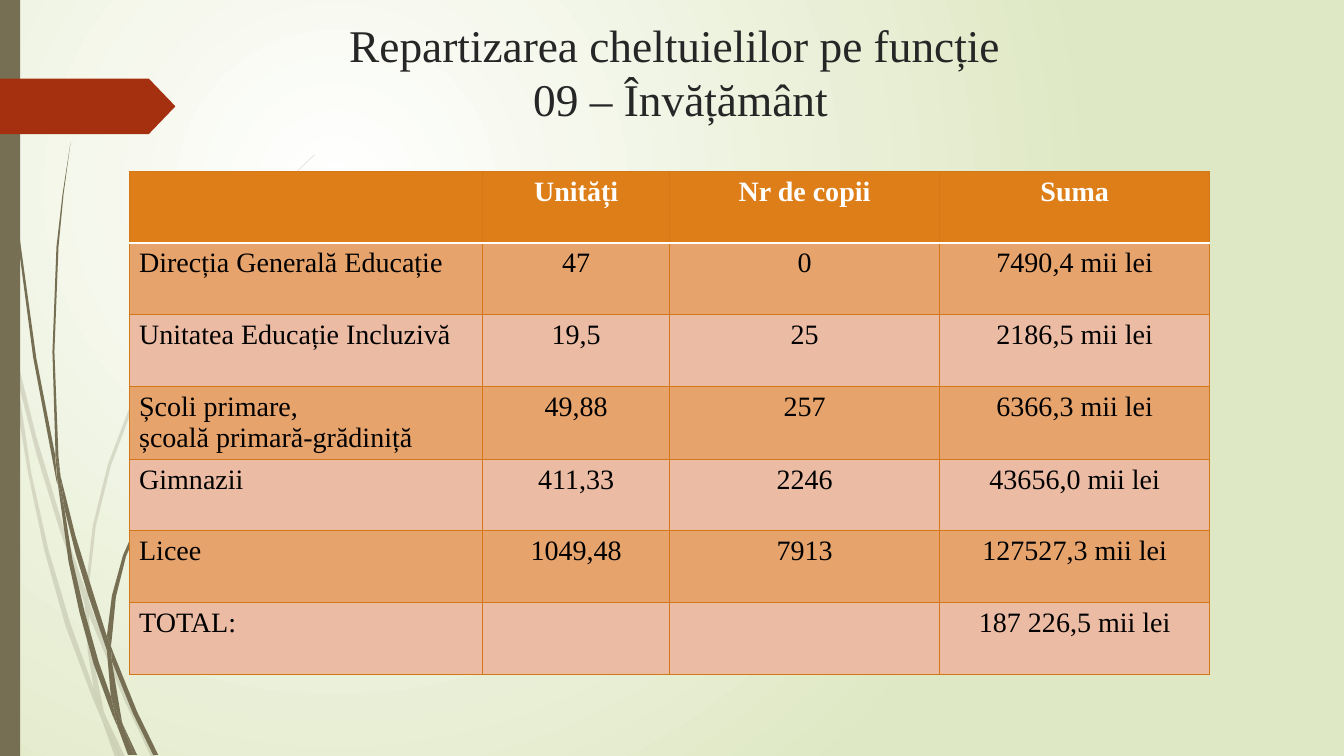
from lxml import etree
from pptx import Presentation
from pptx.dml.color import RGBColor
from pptx.enum.shapes import MSO_SHAPE
from pptx.enum.text import MSO_ANCHOR, PP_ALIGN
from pptx.oxml import parse_xml
from pptx.oxml.ns import nsdecls, qn
from pptx.util import Inches, Pt

CENTER, LEFT = PP_ALIGN.CENTER, PP_ALIGN.LEFT
TOP = MSO_ANCHOR.TOP
RECTANGLE, PENTAGON = MSO_SHAPE.RECTANGLE, MSO_SHAPE.PENTAGON
FONT = "Times New Roman"
COLORS = {
    "white": "FFFFFF", "black": "000000", "title": "262626",
    "green": "DFE8C4", "grass": "766F54", "arrow": "A53010",
    "header": "DE7E18", "band_dark": "E6A36C", "band_light": "EBBBA4",
    "border": "D47817",
}
RGB = {name: RGBColor.from_string(value) for name, value in COLORS.items()}


def fill_plain(shape, color):
    shape.shadow.inherit = False
    shape.line.fill.background()
    shape.fill.solid()
    shape.fill.fore_color.rgb = RGB[color]


def add_run(paragraph, text, size, color, bold=False):
    run = paragraph.add_run()
    run.text = text
    run.font.name = FONT
    run.font.size = Pt(size)
    run.font.bold = bold
    run.font.color.rgb = RGB[color]


presentation = Presentation()
presentation.slide_width = Inches(13.33)
presentation.slide_height = Inches(7.5)
slide = presentation.slides.add_slide(presentation.slide_layouts[6])

# Background: white glow in the upper left fading to green
background = slide.background.fill
background.gradient()
for stop, color in zip(background.gradient_stops, ("white", "green")):
    stop.color.rgb = RGB[color]
linear = slide.background._cSld.find(".//" + qn("a:lin"))
linear.getparent().replace(linear, parse_xml(
    f'<a:path {nsdecls("a")} path="circle">'
    '<a:fillToRect l="50000" t="50000" r="100000" b="100000"/></a:path>'))

# Grass: segments of the blades, pale ones behind, solid ones in front
pale_segments = [
    [(0.11, 3.5), (0.09, 3.22), (0, 2.82), (0, 2.99), (0.1, 3.44)],
    [(0.58, 5.22), (0.84, 5.99), (0.85, 5.86), (0.62, 5.2), (0.36, 4.33), (0.14, 3.45),
     (0.17, 3.76), (0.36, 4.5)],
    [(0.92, 6.07), (0.88, 5.96), (0.88, 6.1), (1.23, 6.94), (1.5, 7.51), (1.55, 7.51), (1.27, 6.92)],
    [(1.19, 7.51), (1.24, 7.51), (1.05, 7.11)],
    [(0.93, 6.83), (0.7, 6.19), (0.48, 5.45), (0.31, 4.69), (0.17, 3.76), (0.11, 3.5), (0.18, 4.1),
     (0.28, 4.7), (0.44, 5.46), (0.65, 6.21), (0.92, 6.93), (1.01, 7.14), (0.99, 7.07)],
    [(0.84, 5.99), (0.87, 6.46), (0.93, 6.83), (0.96, 6.92), (1.05, 7.11), (1.03, 7.06),
     (0.91, 6.46), (0.88, 6.1), (0.88, 6.08)],
    [(0.88, 5.84), (0.95, 5.22), (1.1, 4.62), (1.32, 4.04), (1.6, 3.49), (1.92, 2.95), (2.29, 2.45),
     (2.68, 1.98), (2.9, 1.75), (3.12, 1.54), (3.12, 1.53), (2.89, 1.75), (2.68, 1.97), (2.28, 2.44),
     (1.9, 2.94), (1.58, 3.48), (1.29, 4.03), (1.07, 4.61), (0.92, 5.22), (0.85, 5.84),
     (0.85, 5.86), (0.88, 5.96)],
    [(1.01, 7.14), (1.14, 7.51), (1.19, 7.51)],
    [(0.88, 6.08), (0.88, 6.1), (0.88, 5.96), (0.85, 5.86), (0.84, 5.99)],
    [(0.96, 6.92), (0.93, 6.83), (0.99, 7.07), (1.01, 7.14), (1.19, 7.51), (1.05, 7.11)],
]
solid_segments = [
    [(0.07, 1.1), (0.17, 2.33), (0.33, 3.55), (0.56, 4.77), (0.57, 4.81), (0.55, 4.57), (0.55, 4.53),
     (0.36, 3.55), (0.19, 2.32), (0.08, 1.09), (0.05, 0.48), (0.04, 0), (0.03, 0), (0.04, 0.48)],
    [(0.88, 5.92), (1.06, 6.45), (1.06, 6.33), (1.06, 6.31), (0.93, 5.9), (0.75, 5.32), (0.6, 4.72),
     (0.64, 5.05), (0.75, 5.49)],
    [(1.13, 6.49), (1.1, 6.41), (1.11, 6.56), (1.32, 7.08), (1.52, 7.49), (1.57, 7.49), (1.36, 7.06)],
    [(1.1, 6.91), (0.98, 6.57), (0.84, 6.07), (0.72, 5.56), (0.64, 5.05), (0.57, 4.77), (0.68, 5.57),
     (0.79, 6.08), (0.93, 6.59), (1.11, 7.08), (1.17, 7.22), (1.16, 7.17)],
    [(0.6, 4.72), (0.58, 4.53), (0.54, 3.49), (0.58, 2.45), (0.63, 1.93), (0.7, 1.41),
     (0.62, 1.93), (0.56, 2.45), (0.52, 3.49), (0.55, 4.49)],
    [(1.33, 7.49), (1.36, 7.49), (1.22, 7.19)],
    [(0.57, 4.77), (0.64, 5.05), (0.6, 4.72), (0.55, 4.49), (0.55, 4.53)],
    [(1.11, 6.33), (1.15, 5.92), (1.25, 5.52), (1.58, 4.76), (2.05, 4.06), (2.31, 3.74), (2.45, 3.59),
     (2.61, 3.44), (2.6, 3.44), (2.45, 3.58), (2.31, 3.73), (2.04, 4.05), (1.56, 4.74),
     (1.22, 5.51), (1.11, 5.91), (1.06, 6.31), (1.1, 6.41)],
    [(1.17, 7.22), (1.27, 7.49), (1.31, 7.49)],
    [(1.06, 6.45), (1.1, 6.91), (1.16, 7.06), (1.22, 7.19), (1.21, 7.16), (1.11, 6.56), (1.09, 6.51)],
    [(1.06, 6.45), (1.09, 6.51), (1.11, 6.56), (1.1, 6.41), (1.06, 6.31)],
    [(1.16, 7.06), (1.1, 6.91), (1.16, 7.17), (1.17, 7.22), (1.3, 7.49), (1.33, 7.49), (1.22, 7.19)],
]
for opacity, segments in ((20, pale_segments), (100, solid_segments)):
    for outline in segments:
        vertices = [(Inches(x), Inches(y)) for x, y in outline]
        builder = slide.shapes.build_freeform(*vertices[0])
        builder.add_line_segments(vertices[1:], close=True)
        blade = builder.convert_to_shape()
        fill_plain(blade, "grass")
        if opacity < 100:
            color_node = blade._element.spPr.find(".//" + qn("a:srgbClr"))
            etree.SubElement(color_node, qn("a:alpha"), val=str(opacity * 1000))

# Side bar and arrow
side_bar = slide.shapes.add_shape(RECTANGLE, 0, 0, Inches(0.2), Inches(7.5))
fill_plain(side_bar, "grass")
arrow = slide.shapes.add_shape(PENTAGON, 0, Inches(0.78), Inches(1.74), Inches(0.55))
arrow.adjustments[0] = 0.48
fill_plain(arrow, "arrow")

# Title
title = slide.shapes.add_textbox(Inches(1.5), Inches(0.12), Inches(10.5), Inches(1.35))
frame = title.text_frame
frame.word_wrap = True
frame.vertical_anchor = TOP
frame.margin_top = Inches(0.05)
paragraph = frame.paragraphs[0]
paragraph.alignment = CENTER
add_run(paragraph, "Repartizarea cheltuielilor pe funcție ", 32.4, "title")
paragraph.add_line_break()
add_run(paragraph, "09 – Învățământ", 32.4, "title")

# Table
rows = [
    ("", "Unități", "Nr de copii", "Suma"),
    ("Direcția Generală Educație", "47", "0", "7490,4 mii lei"),
    ("Unitatea Educație Incluzivă", "19,5", "25", "2186,5 mii lei"),
    ("Școli primare,\nșcoală primară-grădiniță", "49,88", "257", "6366,3 mii lei"),
    ("Gimnazii", "411,33", "2246", "43656,0 mii lei"),
    ("Licee", "1049,48", "7913", "127527,3 mii lei"),
    ("TOTAL:", "", "", "187 226,5 mii lei"),
]
column_widths = (3.51, 1.85, 2.68, 2.68)
row_height = 0.71
table = slide.shapes.add_table(
    len(rows), len(column_widths), Inches(1.28), Inches(1.7),
    Inches(sum(column_widths)), Inches(row_height * len(rows))).table
for column, width in zip(table.columns, column_widths):
    column.width = Inches(width)
for row_index, texts in enumerate(rows):
    table.rows[row_index].height = Inches(row_height)
    is_header = row_index == 0
    band = "header" if is_header else ("band_light", "band_dark")[row_index % 2]
    borders = {side: ("border", 0.75) for side in ("lnL", "lnR", "lnT", "lnB")}
    if is_header:
        borders["lnB"] = ("white", 1.25)
    elif row_index == 1:
        borders["lnT"] = ("white", 1.25)
    for column_index, text in enumerate(texts):
        cell = table.cell(row_index, column_index)
        cell.margin_bottom = Inches(0.01)
        cell.fill.solid()
        cell.fill.fore_color.rgb = RGB[band]
        properties = cell._tc.get_or_add_tcPr()
        for position, (side, (color, weight)) in enumerate(borders.items()):
            properties.insert(position, parse_xml(
                f'<a:{side} {nsdecls("a")} w="{Pt(weight)}"><a:solidFill>'
                f'<a:srgbClr val="{COLORS[color]}"/></a:solidFill></a:{side}>'))
        for line_index, line in enumerate(text.split("\n") if text else []):
            frame = cell.text_frame
            paragraph = frame.add_paragraph() if line_index else frame.paragraphs[0]
            paragraph.alignment = CENTER if column_index else LEFT
            add_run(paragraph, line, 20, "white" if is_header else "black", is_header)

presentation.save("out.pptx")
